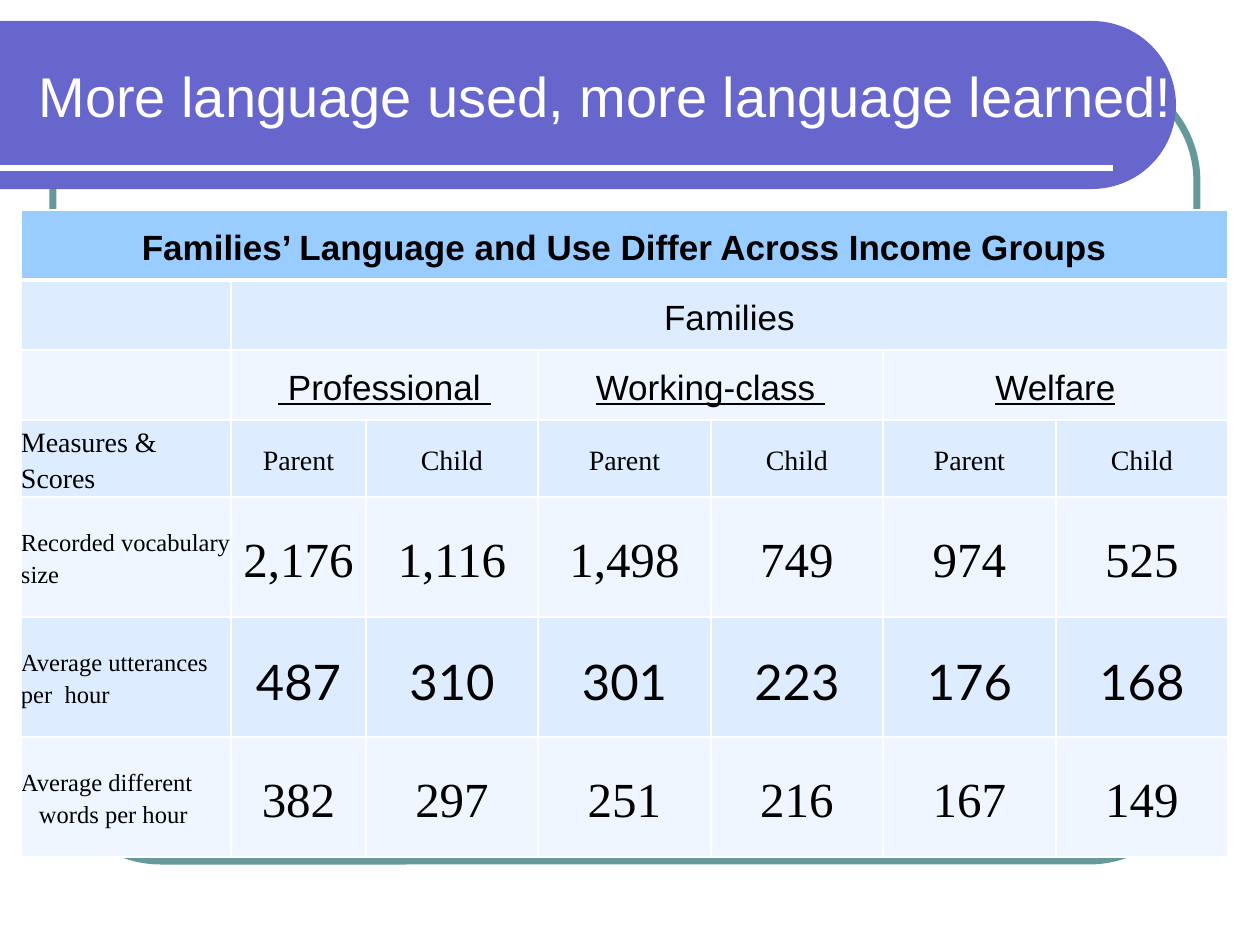
from math import cos, pi, sin

from lxml.etree import SubElement
from pptx import Presentation
from pptx.dml.color import RGBColor
from pptx.enum.shapes import MSO_CONNECTOR, MSO_SHAPE
from pptx.enum.text import MSO_ANCHOR, PP_ALIGN
from pptx.oxml import parse_xml
from pptx.oxml.ns import nsdecls, qn
from pptx.util import Emu, Pt

SERIF = "Times New Roman"
SANS = "Arial"
HEADING_FILL, DARK_BAND, LIGHT_BAND = "99CCFF", "DEECFF", "EFF6FF"
COLUMN_WIDTHS = [210, 135, 172, 173, 172, 173, 172]
ROW_HEIGHTS = [70] * 4 + [120] * 3
GROUPS = [" Professional ", "Working-class ", "Welfare"]
MEASURES = [
    (["Recorded vocabulary size"], SERIF, ["2,176", "1,116", "1,498", "749", "974", "525"]),
    (["Average utterances per  hour"], "Lato", ["487", "310", "301", "223", "176", "168"]),
    (["Average different", "words per hour"], SERIF, ["382", "297", "251", "216", "167", "149"]),
]


def px(length):
    return Emu(round(length * 914400 / 126))


def color(code):
    return RGBColor.from_string(code)


def add_run(paragraph, text, font, size, code="000000", bold=False, underline=False):
    run = paragraph.add_run()
    run.text = text
    run.font.name = font
    run.font.size = Pt(size)
    run.font.bold = bold
    run.font.underline = underline
    run.font.color.rgb = color(code)


def add_frame(slide, left, top, width, height):
    frame = slide.shapes.add_shape(
        MSO_SHAPE.ROUNDED_RECTANGLE, px(left), px(top), px(width), px(height))
    frame.adjustments[0] = 0.137
    frame.shadow.inherit = False
    frame.fill.background()
    frame.line.color.rgb = color("669999")
    frame.line.width = Pt(4)


def add_banner(slide, left, top, width, height):
    radius = height / 2
    center_x, center_y = left + width - radius, top + radius
    angles = [pi * (step / 48 - 0.5) for step in range(49)]
    arc = [(px(center_x + radius * cos(a)), px(center_y + radius * sin(a))) for a in angles]
    builder = slide.shapes.build_freeform(px(left), px(top))
    builder.add_line_segments(arc + [(px(left), px(top + height))], close=True)
    banner = builder.convert_to_shape()
    banner.shadow.inherit = False
    banner.fill.solid()
    banner.fill.fore_color.rgb = color("6666CC")
    banner.line.fill.background()

    rule_y = px(top + height - 21)
    rule = slide.shapes.add_connector(
        MSO_CONNECTOR.STRAIGHT, px(left), rule_y, px(left + width - 63), rule_y)
    rule.line.color.rgb = color("FFFFFF")
    rule.line.width = Pt(3)
    SubElement(rule._element.spPr, qn("a:effectLst"))

    title = slide.shapes.add_textbox(px(left + 26), px(top + 11), px(1191), px(126)).text_frame
    title.word_wrap = True
    title.vertical_anchor = MSO_ANCHOR.MIDDLE
    add_run(title.paragraphs[0], "More language used, more language learned!", SANS, 32, "FFFFFF")


def set_borders(cell, row):
    widths = {"L": 1, "R": 1, "T": 3 if row == 1 else 1, "B": 3 if row == 0 else 1}
    properties = cell._tc.get_or_add_tcPr()
    for position, (side, width) in enumerate(widths.items()):
        properties.insert(position, parse_xml(
            f'<a:ln{side} {nsdecls("a")} w="{Pt(width)}"><a:solidFill>'
            f'<a:srgbClr val="FFFFFF"/></a:solidFill></a:ln{side}>'))


def fill_cell(cell, lines, font, size, align=PP_ALIGN.CENTER, space_after=0, **style):
    cell.margin_left = cell.margin_right = cell.margin_top = cell.margin_bottom = 0
    cell.vertical_anchor = MSO_ANCHOR.MIDDLE
    paragraph = cell.text_frame.paragraphs[0]
    paragraph.alignment = align
    paragraph.line_spacing = 1.15
    paragraph.space_after = Pt(space_after)
    for number, line in enumerate(lines):
        if number:
            paragraph.add_line_break()
            hanging = paragraph._p.get_or_add_pPr()
            hanging.set("marL", str(px(18)))
            hanging.set("indent", str(-px(18)))
        add_run(paragraph, line, font, size, **style)


def add_language_table(slide, left, top):
    table = slide.shapes.add_table(
        len(ROW_HEIGHTS), len(COLUMN_WIDTHS), px(left), px(top),
        px(sum(COLUMN_WIDTHS)), px(sum(ROW_HEIGHTS))).table
    table.first_row = table.horz_banding = False
    for column, width in zip(table.columns, COLUMN_WIDTHS):
        column.width = px(width)
    for index, (row, height) in enumerate(zip(table.rows, ROW_HEIGHTS)):
        row.height = px(height)
        band = DARK_BAND if index % 2 else LIGHT_BAND
        for cell in row.cells:
            cell.fill.solid()
            cell.fill.fore_color.rgb = color(band if index else HEADING_FILL)
            set_borders(cell, index)

    table.cell(0, 0).merge(table.cell(0, 6))
    fill_cell(table.cell(0, 0), ["Families’ Language and Use Differ Across Income Groups"],
              SANS, 20, bold=True)
    table.cell(1, 1).merge(table.cell(1, 6))
    fill_cell(table.cell(1, 1), ["Families"], SANS, 20, space_after=10)

    fill_cell(table.cell(3, 0), ["Measures & Scores"], SERIF, 16, PP_ALIGN.LEFT)
    for column, group in zip((1, 3, 5), GROUPS):
        table.cell(2, column).merge(table.cell(2, column + 1))
        fill_cell(table.cell(2, column), [group], SANS, 20, space_after=10, underline=True)
        for offset, speaker in enumerate(("Parent", "Child")):
            fill_cell(table.cell(3, column + offset), [speaker], SERIF, 16)

    for row, (measure, font, scores) in enumerate(MEASURES, 4):
        fill_cell(table.cell(row, 0), measure, SERIF, 14, PP_ALIGN.LEFT)
        for column, score in enumerate(scores, 1):
            fill_cell(table.cell(row, column), [score], font, 28)


def main():
    deck = Presentation()
    deck.slide_width, deck.slide_height = px(1260), px(945)
    slide = deck.slides.add_slide(deck.slide_layouts[6])
    add_frame(slide, 53, 73, 1144, 788)
    add_banner(slide, 0, 21, 1176, 168)
    add_language_table(slide, 21, 210)
    deck.save("out.pptx")


if __name__ == "__main__":
    main()
